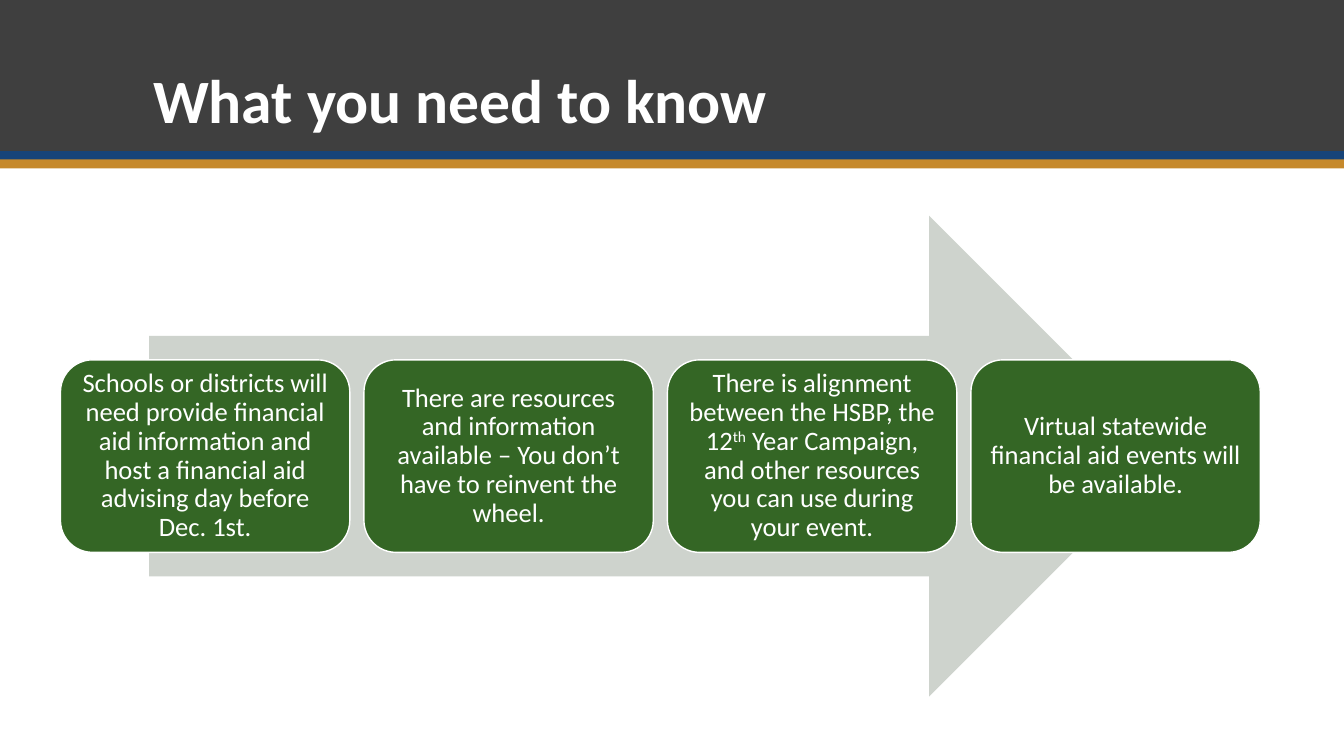
from dataclasses import dataclass

from pptx import Presentation
from pptx.dml.color import RGBColor
from pptx.enum.shapes import MSO_SHAPE as SHAPE
from pptx.enum.text import MSO_ANCHOR as ANCHOR, PP_ALIGN as ALIGN
from pptx.util import Emu, Pt

EMU_PER_PX = 9144


def px(n):
    return Emu(n * EMU_PER_PX)


@dataclass(frozen=True)
class Theme:
    font: str = "Calibri"
    header: str = "3F3F3F"
    blue: str = "174479"
    gold: str = "C6892B"
    arrow: str = "CED3CD"
    card: str = "346625"
    white: str = "FFFFFF"
    title_size: int = 44
    card_size: int = 19


class SlideBuilder:
    def __init__(self, slide, theme):
        self.slide = slide
        self.theme = theme

    def shape(self, kind, box, fill, line=None):
        sp = self.slide.shapes.add_shape(kind, *map(px, box))
        sp.shadow.inherit = False
        sp.fill.solid()
        sp.fill.fore_color.rgb = RGBColor.from_string(fill)
        if line:
            sp.line.color.rgb = RGBColor.from_string(line)
            sp.line.width = Pt(1)
        else:
            sp.line.fill.background()
        return sp

    def format_text(self, tf, size, bold, align, anchor):
        tf.word_wrap = True
        tf.vertical_anchor = anchor
        p = tf.paragraphs[0]
        p.alignment = align
        p.line_spacing = 0.9
        for r in p.runs:
            r.font.name = self.theme.font
            r.font.size = Pt(size)
            r.font.bold = bold
            r.font.color.rgb = RGBColor.from_string(self.theme.white)

    def title(self, box, text):
        tf = self.slide.shapes.add_textbox(*map(px, box)).text_frame
        tf.text = text
        self.format_text(tf, self.theme.title_size, True, ALIGN.LEFT, ANCHOR.BOTTOM)

    def card(self, box, text, superscript="", rest=""):
        sp = self.shape(SHAPE.ROUNDED_RECTANGLE, box, self.theme.card, self.theme.white)
        tf = sp.text_frame
        tf.margin_left = tf.margin_right = tf.margin_top = tf.margin_bottom = px(8)
        p = tf.paragraphs[0]
        p.text = text
        if superscript:
            r = p.add_run()
            r.text = superscript
            r._r.get_or_add_rPr().set("baseline", "30000")
            p.add_run().text = rest
        self.format_text(tf, self.theme.card_size, False, ALIGN.CENTER, ANCHOR.MIDDLE)


CARDS = [
    ("Schools or districts will need provide financial aid information "
     "and host a financial aid advising day before Dec. 1st.",),
    ("There are resources and information available – "
     "You don’t have to reinvent the wheel.",),
    ("There is alignment between the HSBP, the 12", "th",
     " Year Campaign, and other resources you can use during your event."),
    ("Virtual statewide financial aid events will be available.",),
]
CARD_LEFT, CARD_TOP, CARD_WIDTH, CARD_HEIGHT = 60, 357, 287, 191
CARD_PITCH = 301


def main():
    prs = Presentation()
    prs.slide_width, prs.slide_height = px(1333), px(750)
    theme = Theme()
    s = SlideBuilder(prs.slides.add_slide(prs.slide_layouts[6]), theme)

    for top, height, fill in ((0, 150, theme.header), (150, 9, theme.blue),
                              (158, 9, theme.gold)):
        s.shape(SHAPE.RECTANGLE, (0, top, 1333, height), fill)
    s.title((142, 28, 1050, 113), "What you need to know")

    s.shape(SHAPE.RIGHT_ARROW, (148, 214, 1012, 477), theme.arrow)
    for i, pieces in enumerate(CARDS):
        left = CARD_LEFT + i * CARD_PITCH
        s.card((left, CARD_TOP, CARD_WIDTH, CARD_HEIGHT), *pieces)

    prs.save("out.pptx")


if __name__ == "__main__":
    main()
